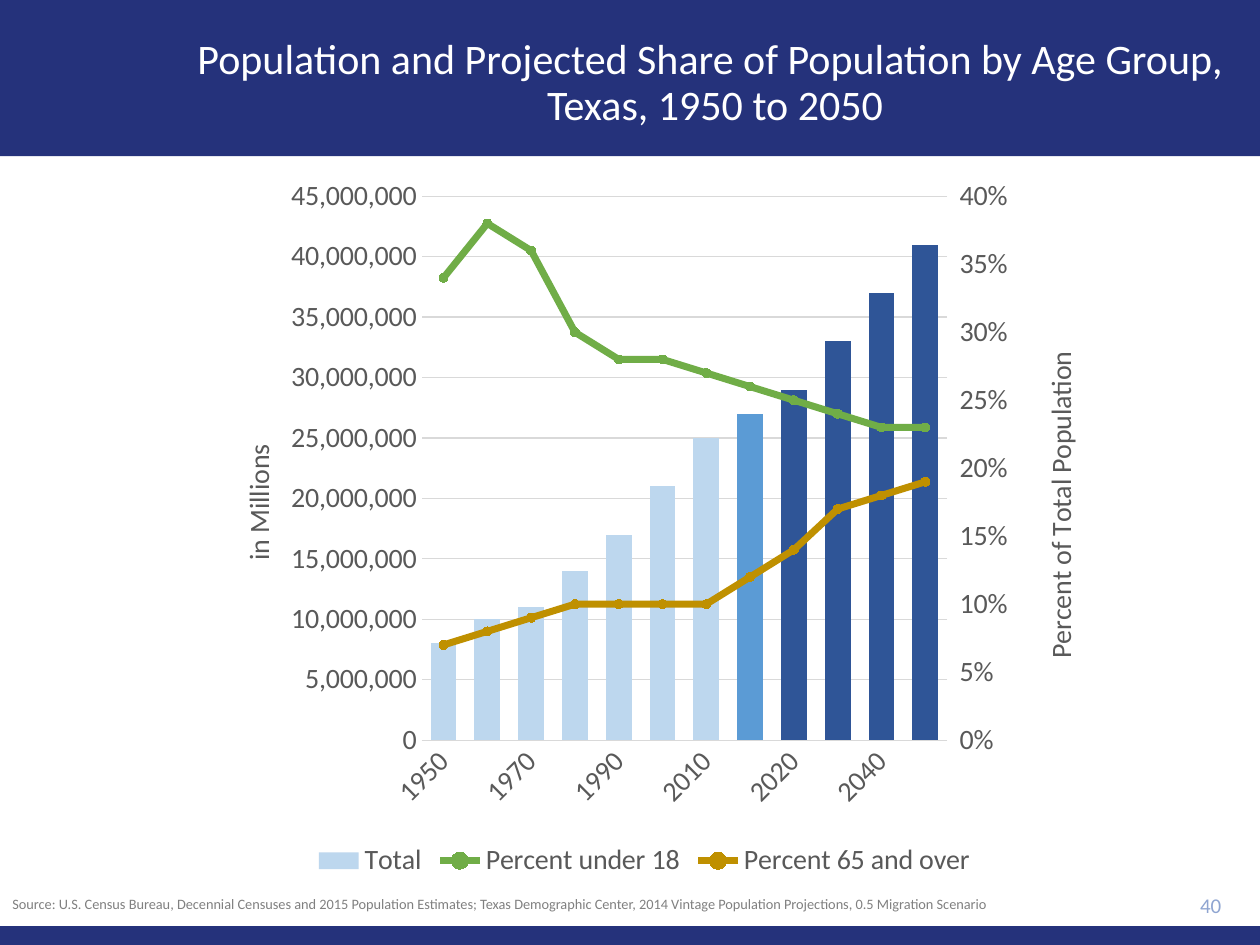
from copy import deepcopy
from typing import NamedTuple

from lxml import etree
from pptx import Presentation
from pptx.chart.axis import ValueAxis
from pptx.chart.data import CategoryChartData
from pptx.dml.color import RGBColor
from pptx.enum import chart as chart_enum, shapes, text
from pptx.oxml.ns import qn
from pptx.util import Cm, Pt


class Theme(NamedTuple):
    font: str = "Calibri"
    navy: str = "25327B"
    white: str = "FFFFFF"
    page: str = "8FA5D1"
    source: str = "808080"
    axis: str = "595959"
    grid: str = "D9D9D9"
    past: str = "BDD7EE"
    estimate: str = "5B9BD5"
    projection: str = "2F5597"
    young: str = "70AD47"
    old: str = "BF9000"
    title_size: float = 24
    chart_size: float = 16
    page_size: float = 12
    source_size: float = 8.2


class Label(NamedTuple):
    words: str
    box: tuple
    size: float
    color: str
    align: text.PP_ALIGN
    anchor: text.MSO_ANCHOR = text.MSO_ANCHOR.MIDDLE
    line_spacing: float = 1.0


class ShareLine(NamedTuple):
    name: str
    color: str
    percents: tuple


THEME = Theme()
# Boxes are left, top, width and height in centimetres.
BANDS = ((0, 0, 25.4, 3.15), (0, 18.67, 25.4, 0.38))
CHART_BOX = (4.01, 3.38, 17.96, 14.43)
LABELS = (
    Label("Population and Projected Share of Population by Age Group, \vTexas, 1950 to 2050",
          (3.43, 0.74, 21.97, 1.9), THEME.title_size, THEME.white,
          text.PP_ALIGN.CENTER, line_spacing=0.9),
    Label("40", (22.61, 17.81, 2.26, 0.86), THEME.page_size, THEME.page, text.PP_ALIGN.RIGHT),
    Label("Source: U.S. Census Bureau, Decennial Censuses and 2015 Population Estimates; Texas "
          "Demographic Center, 2014 Vintage Population Projections, 0.5 Migration Scenario",
          (0, 17.93, 23.98, 0.61), THEME.source_size, THEME.source,
          text.PP_ALIGN.LEFT, text.MSO_ANCHOR.TOP),
)
YEARS = (1950, 1960, 1970, 1980, 1990, 2000, 2010, 2015, 2020, 2030, 2040, 2050)
ESTIMATE_YEAR = 2015
MILLIONS = (8, 10, 11, 14, 17, 21, 25, 27, 29, 33, 37, 41)
SHARES = (
    ShareLine("Percent under 18", THEME.young, (34, 38, 36, 30, 28, 28, 27, 26, 25, 24, 23, 23)),
    ShareLine("Percent 65 and over", THEME.old, (7, 8, 9, 10, 10, 10, 10, 12, 14, 17, 18, 19)),
)


def paint(fill, color: str) -> None:
    fill.solid()
    fill.fore_color.rgb = RGBColor.from_string(color)


def style_font(font, size: float = THEME.chart_size, color: str = THEME.axis) -> None:
    font.name, font.size, font.bold = THEME.font, Pt(size), False
    font.color.rgb = RGBColor.from_string(color)


def add_band(slide, box: tuple) -> None:
    shape = slide.shapes.add_shape(shapes.MSO_SHAPE.RECTANGLE, *map(Cm, box))
    shape.shadow.inherit = False
    paint(shape.fill, THEME.navy)
    shape.line.fill.background()


def add_label(slide, label: Label) -> None:
    frame = slide.shapes.add_textbox(*map(Cm, label.box)).text_frame
    frame.word_wrap = True
    frame.vertical_anchor = label.anchor
    paragraph = frame.paragraphs[0]
    paragraph.text = label.words
    paragraph.alignment = label.align
    paragraph.line_spacing = label.line_spacing
    style_font(paragraph.font, label.size, label.color)


def add_node(parent, tag: str, **attributes):
    return etree.SubElement(parent, qn(tag), {k: str(v) for k, v in attributes.items()})


def set_layout(parent, **places) -> None:
    """Fix a chart part at fractions of the chart's size."""
    layout = parent.find(qn("c:layout"))
    if layout is None:
        layout = add_node(parent, "c:layout")
        parent.insert(0, layout)
    manual = add_node(layout, "c:manualLayout")
    for tag, value in places.items():
        add_node(manual, f"c:{tag}", val=value)


def style_value_axis(axis, maximum: float, step: float, number_format: str,
                     words: str, x: float, y: float) -> None:
    axis.minimum_scale, axis.maximum_scale, axis.major_unit = 0, maximum, step
    axis.tick_labels.number_format = number_format
    axis.tick_labels.number_format_is_linked = False
    axis.has_title = False
    title = axis.axis_title
    title.text_frame.text = words
    style_font(title.text_frame.paragraphs[0].font)
    body = title._element.find(".//" + qn("a:bodyPr"))
    body.set("rot", "-5400000")
    body.set("vert", "horz")
    set_layout(title._element, xMode="edge", yMode="edge", x=x, y=y)


def style_axes(chart) -> None:
    years, people = chart.category_axis, chart.value_axis
    for axis in (years, people):
        axis.major_tick_mark = chart_enum.XL_TICK_MARK.NONE
        style_font(axis.tick_labels.font)
    people.format.line.fill.background()
    for line in (years.format.line, people.major_gridlines.format.line):
        paint(line.fill, THEME.grid)
        line.width = Pt(0.75)
    years._element.find(qn("c:txPr")).find(qn("a:bodyPr")).set("rot", "-2700000")
    skip = add_node(years._element, "c:tickLblSkip", val=2)
    years._element.find(qn("c:noMultiLvlLbl")).addprevious(skip)
    style_value_axis(people, 45_000_000, 5_000_000, "#,##0", "in Millions", 0.04, 0.38)


def move_shares_to_right_axis(chart) -> None:
    """Turn every series but the first into lines on a second pair of axes."""
    axes = [chart.category_axis._element, chart.value_axis._element]
    bars = chart.plots[0]._element
    lines = add_node(bars.getparent(), "c:lineChart")
    bars.addnext(lines)
    add_node(lines, "c:grouping", val="standard")
    add_node(lines, "c:varyColors", val=0)
    for series in bars.findall(qn("c:ser"))[1:]:
        for flag in series.findall(qn("c:invertIfNegative")):
            series.remove(flag)
        lines.append(series)
    add_node(lines, "c:marker", val=1)

    years, people = copies = [deepcopy(axis) for axis in axes]
    ids = ("50010", "50020")
    for axis, own, other in zip(copies, ids, reversed(ids)):
        axis.find(qn("c:axId")).set("val", own)
        axis.find(qn("c:crossAx")).set("val", other)
        add_node(lines, "c:axId", val=own)
    axes[1].addnext(people)
    people.addnext(years)
    years.find(qn("c:delete")).set("val", "1")
    people.find(qn("c:axPos")).set("val", "r")
    people.find(qn("c:crosses")).set("val", "max")

    share = ValueAxis(people)
    share.has_major_gridlines = False
    share.major_tick_mark = chart_enum.XL_TICK_MARK.OUTSIDE
    style_value_axis(share, 0.4, 0.05, "0%", "Percent of Total Population", 0.94, 0.25)


def style_series(chart) -> None:
    bars, lines = chart.plots
    bars.gap_width, bars.vary_by_categories = 70, False
    total = bars.series[0]
    paint(total.format.fill, THEME.past)
    for index, year in enumerate(YEARS):
        if year >= ESTIMATE_YEAR:
            color = THEME.estimate if year == ESTIMATE_YEAR else THEME.projection
            paint(total.points[index].format.fill, color)
    for series, share in zip(lines.series, SHARES):
        series.smooth = False
        line, marker = series.format.line, series.marker
        line.width = Pt(4)
        marker.style, marker.size = chart_enum.XL_MARKER_STYLE.CIRCLE, 5
        for fill in (line.fill, marker.format.fill, marker.format.line.fill):
            paint(fill, share.color)


def add_population_chart(slide) -> None:
    data = CategoryChartData()
    data.categories = [str(year) for year in YEARS]
    data.add_series("Total", [count * 1_000_000 for count in MILLIONS], "#,##0")
    for share in SHARES:
        data.add_series(share.name, [value / 100 for value in share.percents], "0%")
    kind = chart_enum.XL_CHART_TYPE.COLUMN_CLUSTERED
    chart = slide.shapes.add_chart(kind, *map(Cm, CHART_BOX), data).chart
    chart.has_title, chart.has_legend = False, True
    chart.legend.position = chart_enum.XL_LEGEND_POSITION.BOTTOM
    chart.legend.include_in_layout = False
    for part in (chart, chart.legend):
        style_font(part.font)
    style_axes(chart)
    move_shares_to_right_axis(chart)
    style_series(chart)
    set_layout(chart.plots[0]._element.getparent(), layoutTarget="inner", xMode="edge",
               yMode="edge", x=0.25, y=0.04, w=0.59, h=0.76)


presentation = Presentation()
presentation.slide_width, presentation.slide_height = Cm(25.4), Cm(19.05)
slide = presentation.slides.add_slide(presentation.slide_layouts[6])
for band in BANDS:
    add_band(slide, band)
for label in LABELS:
    add_label(slide, label)
add_population_chart(slide)
presentation.save("out.pptx")
